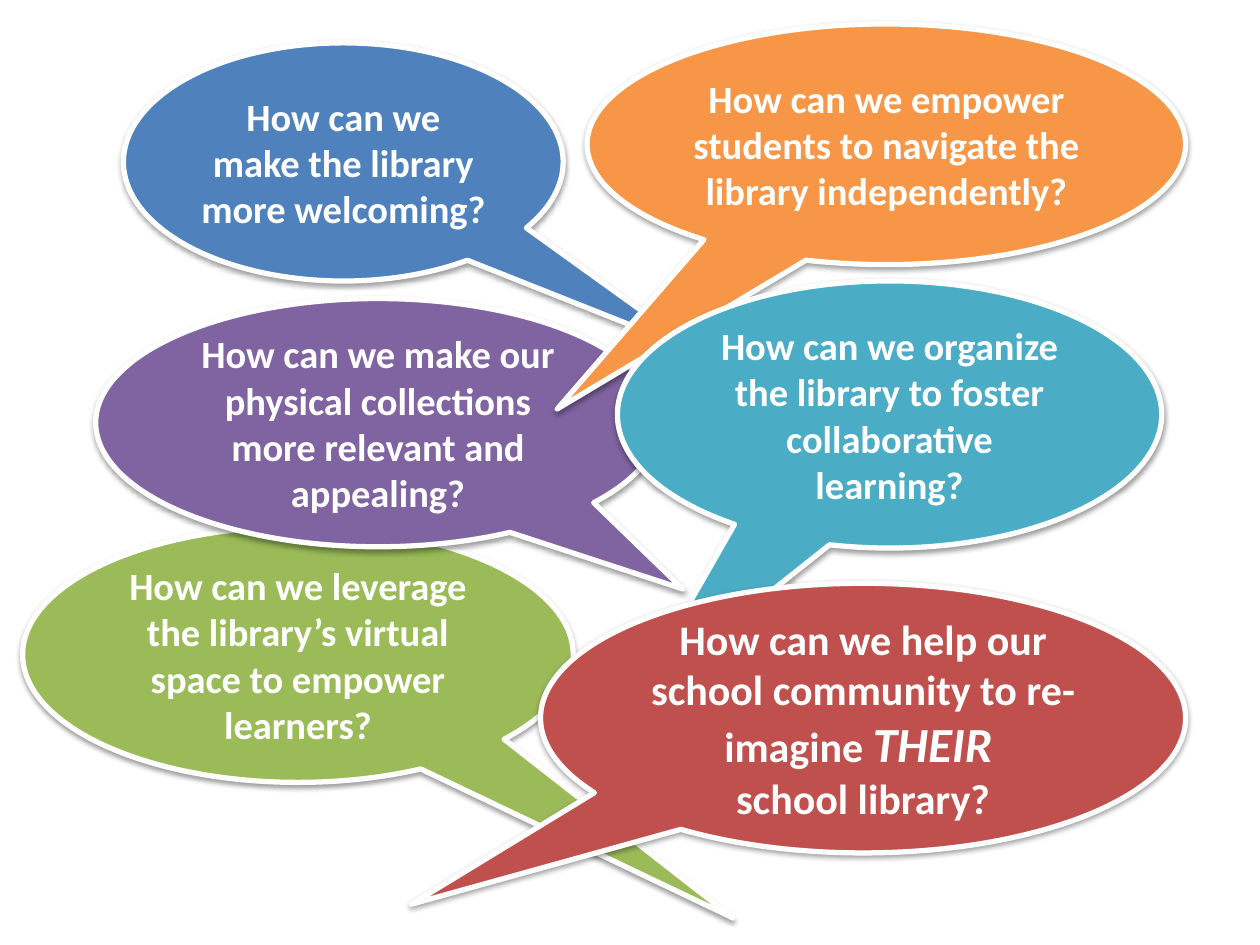
from lxml.etree import SubElement
from pptx import Presentation
from pptx.dml.color import RGBColor
from pptx.enum.shapes import MSO_SHAPE as Shape
from pptx.enum.text import MSO_ANCHOR as Anchor, PP_ALIGN as Align
from pptx.oxml.ns import qn
from pptx.util import Inches, Pt

WHITE = RGBColor(0xFF, 0xFF, 0xFF)
BLUE = RGBColor(0x4F, 0x81, 0xBD)
RED = RGBColor(0xC0, 0x50, 0x4D)
GREEN = RGBColor(0x9B, 0xBB, 0x59)
PURPLE = RGBColor(0x80, 0x64, 0xA2)
TEAL = RGBColor(0x4B, 0xAC, 0xC6)
ORANGE = RGBColor(0xF7, 0x96, 0x46)

# Bubbles from back to front: colour, (left, top, width, height) in inches,
# tail tip as a share of the size from the centre, paragraphs of (text, format)
BUBBLES = [
    (GREEN, (0.18, 4.18, 4.37, 2.03), (0.79, 1.03),
     [[("How can we leverage the library’s virtual space to empower learners?", {})]]),
    (BLUE, (0.98, 0.34, 3.49, 1.89), (0.81, 0.8),
     [[("How can we make the library more welcoming?", {})]]),
    (PURPLE, (0.76, 2.37, 4.48, 1.97), (0.54, 0.67),
     [[("How can we make our physical collections more relevant and appealing?", {})]]),
    (ORANGE, (4.66, 0.19, 4.75, 1.91), (-0.55, 1.1),
     [[("How can we empower students to navigate the library independently?", {})]]),
    (TEAL, (4.9, 2.23, 4.32, 2.12), (-0.47, 1.07),
     [[("How can we organize the library to foster collaborative learning?", {})]]),
    (RED, (4.29, 4.63, 5.12, 2.14), (-0.7, 0.69),
     [[("How can we help our school community to re-imagine ", {"size": 24}),
       ("THEIR", {"size": 28, "italic": True}),
       (" ", {"size": 24})],
      [("school library?", {"size": 24})]]),
]


def add_span(para, text, size=22, italic=False):
    span = para.add_run()
    span.text = text
    font = span.font
    font.name, font.size = "Calibri", Pt(size)
    font.bold, font.italic = True, italic
    font.color.rgb = WHITE


def add_shadow(shape):
    shape.shadow.inherit = False
    effects = shape.element.spPr.find(qn("a:effectLst"))
    shadow = SubElement(effects, qn("a:outerShdw"), blurRad=str(Pt(3.1)),
                        dist=str(Pt(1.6)), dir="5400000", rotWithShape="0")
    color = SubElement(shadow, qn("a:srgbClr"), val="000000")
    SubElement(color, qn("a:alpha"), val="38000")


def add_bubble(slide, color, place, tail, paragraphs):
    bubble = slide.shapes.add_shape(Shape.OVAL_CALLOUT, *map(Inches, place))
    for index, share in enumerate(tail):
        bubble.adjustments[index] = share
    bubble.fill.solid()
    bubble.fill.fore_color.rgb = color
    bubble.line.color.rgb = WHITE
    bubble.line.width = Pt(3)
    add_shadow(bubble)

    frame = bubble.text_frame
    frame.word_wrap = True
    frame.vertical_anchor = Anchor.MIDDLE
    for index, spans in enumerate(paragraphs):
        para = frame.add_paragraph() if index else frame.paragraphs[0]
        para.alignment = Align.CENTER
        for text, style in spans:
            add_span(para, text, **style)


def main():
    deck = Presentation()
    deck.slide_width, deck.slide_height = Inches(10), Inches(7.5)
    slide = deck.slides.add_slide(deck.slide_layouts[6])
    for bubble in BUBBLES:
        add_bubble(slide, *bubble)
    deck.save("out.pptx")


if __name__ == "__main__":
    main()
